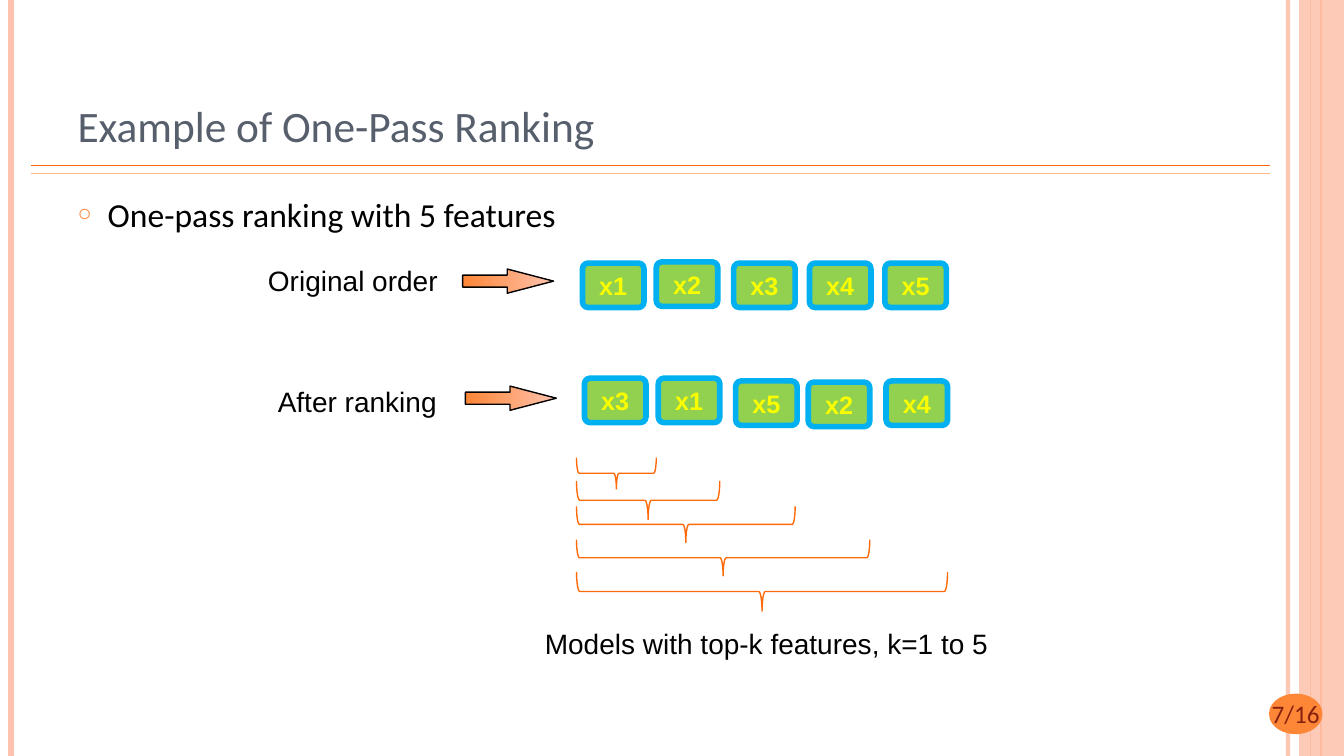
from lxml.etree import SubElement
from pptx import Presentation
from pptx.dml.color import RGBColor
from pptx.enum.shapes import MSO_CONNECTOR, MSO_SHAPE
from pptx.enum.text import MSO_ANCHOR as Anchor, MSO_AUTO_SIZE as AutoSize, PP_ALIGN as Align
from pptx.oxml.ns import qn
from pptx.util import Cm, Pt

ORANGE, DEEP_ORANGE, PEACH, BLACK = "FE8637", "FF6B0A", "FEC3AE", "000000"
SLIDE_WIDTH, SLIDE_HEIGHT = 33.87, 19.05
ORIGINAL_ORDER = [("x1", 14.68, 6.63), ("x2", 16.54, 6.6), ("x3", 18.49, 6.63),
                  ("x4", 20.4, 6.63), ("x5", 22.3, 6.63)]
RANKED_ORDER = [("x3", 14.73, 9.53), ("x1", 16.59, 9.53), ("x5", 18.54, 9.6),
                ("x2", 20.37, 9.63), ("x4", 22.33, 9.6)]
TOP_K_BRACES = [(11.53, 2.01, 0.79), (12.12, 3.61, 0.97), (12.76, 5.51, 0.91),
                (13.6, 7.39, 0.91), (14.41, 9.35, 0.99)]


def rgb(hex_color):
    """Turn a hex string into a colour."""
    return RGBColor.from_string(hex_color)


def paint(fill, hex_color):
    """Make a fill solid in one colour."""
    fill.solid()
    fill.fore_color.rgb = rgb(hex_color)


def set_opacity(shape, percent):
    """Make the colours of a shape partly transparent."""
    for color in shape._element.spPr.iter(qn("a:srgbClr")):
        SubElement(color, qn("a:alpha")).set("val", str(percent * 1000))


def format_text(shape, text, size, hex_color, font_name="Calibri", bold=False, align=Align.LEFT):
    """Write one formatted paragraph and return it."""
    shape.text_frame.text = text
    paragraph = shape.text_frame.paragraphs[0]
    paragraph.alignment = align
    font = paragraph.runs[0].font
    font.size, font.name, font.bold = Pt(size), font_name, bold
    paint(font.fill, hex_color)
    return paragraph


def place(shape, left, top, width, height):
    """Move and size a shape in centimetres."""
    shape.left, shape.top = Cm(left), Cm(top)
    shape.width, shape.height = Cm(width), Cm(height)


def add_rule(slide, start, end, hex_color, weight):
    """Draw a straight line without a shadow."""
    rule = slide.shapes.add_connector(MSO_CONNECTOR.STRAIGHT, *map(Cm, start + end))
    paint(rule.line.fill, hex_color)
    rule.line.width = Pt(weight)
    SubElement(rule._element.spPr, qn("a:effectLst"))
    return rule


def add_outline(slide, kind, left, top, width, height, fill=None, line=None, weight=1):
    """Add a preset shape with an optional fill and line."""
    shape = slide.shapes.add_shape(kind, Cm(left), Cm(top), Cm(width), Cm(height))
    shape.shadow.inherit = False
    for target, hex_color in ((shape.fill, fill), (shape.line.fill, line)):
        if hex_color:
            paint(target, hex_color)
        else:
            target.background()
    if line:
        shape.line.width = Pt(weight)
    return shape


def add_frame(slide):
    """Draw the side bars and the double rule under the title."""
    bars = [(32.46, PEACH, 3), (0.28, PEACH, 4.5), (33.3, ORANGE, 1.5), (33.02, ORANGE, 0.75)]
    rules = [add_rule(slide, (left, 0), (left, SLIDE_HEIGHT), hex_color, weight)
             for left, hex_color, weight in bars]
    set_opacity(rules[0], 93)
    band = add_outline(slide, MSO_SHAPE.RECTANGLE, 32.74, 0, 1.13, SLIDE_HEIGHT, PEACH)
    set_opacity(band, 87)
    for top, hex_color in ((4.17, DEEP_ORANGE), (4.37, "FEB687")):
        add_rule(slide, (0.79, top), (32, top), hex_color, 1)


def add_page_number(slide, text):
    """Add the page number on its oval."""
    oval = add_outline(slide, MSO_SHAPE.OVAL, 31.98, 17.48, 1.35, 1.02, ORANGE)
    frame = oval.text_frame
    frame.word_wrap = False
    frame.vertical_anchor = Anchor.MIDDLE
    frame.margin_left = frame.margin_right = frame.margin_top = frame.margin_bottom = 0
    format_text(oval, text, 18, "862110", align=Align.CENTER)


def fill_title(slide, text):
    """Format the title placeholder."""
    title = slide.shapes.title
    place(title, 1.7, 0.76, 27.66, 3.18)
    title.text_frame.auto_size = AutoSize.NONE
    title.text_frame.vertical_anchor = Anchor.BOTTOM
    format_text(title, text, 31, "575F6D")


def fill_body(slide, text):
    """Format the body placeholder with a ring bullet."""
    body = slide.placeholders[1]
    place(body, 1.7, 4.75, 27.66, 13.23)
    body.text_frame.auto_size = AutoSize.NONE
    paragraph = format_text(body, text, 24, BLACK)
    paragraph.space_before = Pt(0)
    properties = paragraph._p.get_or_add_pPr()
    properties.set("marL", str(Cm(0.76)))
    properties.set("indent", str(-Cm(0.76)))
    SubElement(SubElement(properties, qn("a:buClr")), qn("a:srgbClr")).set("val", ORANGE)
    SubElement(properties, qn("a:buSzPct")).set("val", "70000")
    SubElement(properties, qn("a:buFont")).set("typeface", "Arial")
    SubElement(properties, qn("a:buChar")).set("char", "○")


def add_label(slide, text, left, top, width):
    """Add a centred one-line label."""
    label = slide.shapes.add_textbox(Cm(left), Cm(top), Cm(width), Cm(0.84))
    label.text_frame.word_wrap = False
    label.text_frame.auto_size = AutoSize.SHAPE_TO_FIT_TEXT
    paragraph = format_text(label, text, 20, BLACK, "Arial", align=Align.CENTER)
    paragraph.line_spacing = 0.65


def add_arrow(slide, left, top):
    """Add a block arrow with a gradient."""
    arrow = add_outline(slide, MSO_SHAPE.RIGHT_ARROW, left, top, 2.29, 0.61, ORANGE, BLACK)
    arrow.adjustments[0], arrow.adjustments[1] = 0.5, 1.91
    arrow.fill.gradient()
    arrow.fill.gradient_angle = 0
    for stop, hex_color in zip(arrow.fill.gradient_stops, (ORANGE, PEACH)):
        stop.color.rgb = rgb(hex_color)


def add_feature(slide, name, left, top):
    """Add one rounded feature box."""
    box = add_outline(slide, MSO_SHAPE.ROUNDED_RECTANGLE, left, top, 1.55, 1.12,
                      "92D050", "00B0F0", 4)
    box.adjustments[0] = 0.125
    box.text_frame.word_wrap = False
    box.text_frame.vertical_anchor = Anchor.MIDDLE
    format_text(box, name, 18, "FAFD00", "Arial", True, Align.CENTER)


def add_brace(slide, left, top, span, depth):
    """Add a brace that opens upward over a span."""
    brace = add_outline(slide, MSO_SHAPE.LEFT_BRACE, left + (span - depth) / 2,
                        top + (depth - span) / 2, depth, span, line=DEEP_ORANGE)
    brace.rotation = 270


def main():
    """Build and save the slide."""
    presentation = Presentation()
    presentation.slide_width, presentation.slide_height = Cm(SLIDE_WIDTH), Cm(SLIDE_HEIGHT)
    slide = presentation.slides.add_slide(presentation.slide_layouts[1])
    add_frame(slide)
    add_page_number(slide, "7/16")
    fill_title(slide, "Example of One-Pass Ranking")
    fill_body(slide, "One-pass ranking with 5 features")
    add_label(slide, "Original order", 6.48, 6.78, 4.83)
    add_arrow(slide, 11.66, 6.78)
    add_label(slide, "After ranking", 6.73, 9.83, 4.55)
    add_arrow(slide, 11.73, 9.73)
    for name, left, top in ORIGINAL_ORDER + RANKED_ORDER:
        add_feature(slide, name, left, top)
    for top, span, depth in TOP_K_BRACES:
        add_brace(slide, 14.53, top, span, depth)
    add_label(slide, "Models with top-k features, k=1 to 5", 13.44, 15.93, 11.76)
    presentation.save("out.pptx")


if __name__ == "__main__":
    main()
